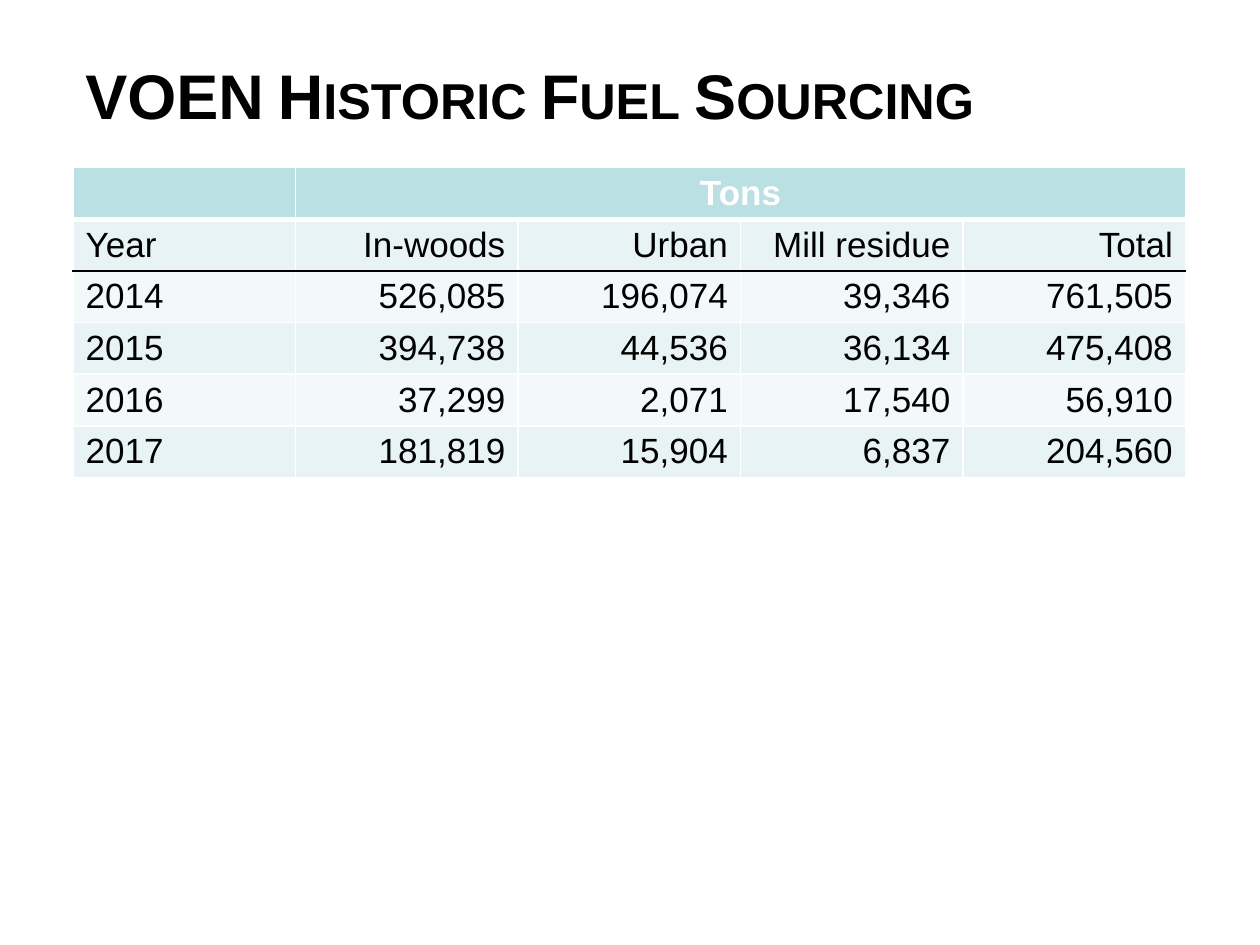
import pptx
import pptx.util
import pptx.dml.color
import pptx.enum.text
import pptx.oxml
import pptx.oxml.ns

Inches, Pt = pptx.util.Inches, pptx.util.Pt
ALIGN = pptx.enum.text.PP_ALIGN
MIDDLE = pptx.enum.text.MSO_ANCHOR.MIDDLE
FONT = "Arial"
COLORS = {"text": "000000", "white": "FFFFFF", "head": "BBE0E3",
          "dark": "E7F3F4", "light": "F3F9FA"}
ROWS = [
    ["", "Tons", "", "", ""],
    ["Year", "In-woods", "Urban", "Mill residue", "Total"],
    ["2014", "526,085", "196,074", "39,346", "761,505"],
    ["2015", "394,738", "44,536", "36,134", "475,408"],
    ["2016", "37,299", "2,071", "17,540", "56,910"],
    ["2017", "181,819", "15,904", "6,837", "204,560"],
]


def rgb(name):
    return pptx.dml.color.RGBColor.from_string(COLORS[name])


def add_run(para, text, size, color, bold):
    run = para.add_run()
    run.text = text
    font = run.font
    font.name, font.size, font.bold = FONT, Pt(size), bold
    font.color.rgb = rgb(color)
    return run


def add_line(cell, side, color, width):
    space = pptx.oxml.ns.nsdecls("a")
    cell._tc.get_or_add_tcPr().append(pptx.oxml.parse_xml(
        f'<a:ln{side} {space} w="{Pt(width)}"><a:solidFill>'
        f'<a:srgbClr val="{COLORS[color]}"/></a:solidFill></a:ln{side}>'))


def add_title(slide, left, top, width, height):
    box = slide.shapes.add_textbox(left, top, width, height)
    frame = box.text_frame
    frame.word_wrap = True
    frame.vertical_anchor = MIDDLE
    run = add_run(frame.paragraphs[0], "VOEN Historic Fuel Sourcing",
                  36, "text", True)
    run._r.get_or_add_rPr().set("cap", "small")


def fill_cell(cell, row, col, text):
    # Edges come before the fill in the cell's XML
    edges = {"L": ("white", 1), "R": ("white", 1),
             "T": {1: ("white", 3), 2: ("text", 1)}.get(row, ("white", 1)),
             "B": {0: ("white", 3), 1: ("text", 1)}.get(row, ("white", 1))}
    for side, (color, width) in edges.items():
        add_line(cell, side, color, width)
    cell.fill.solid()
    cell.fill.fore_color.rgb = rgb(
        "head" if row == 0 else "dark" if row % 2 else "light")

    # Tight margins keep the rows at their set height
    cell.margin_top = cell.margin_bottom = Inches(0.03)
    cell.vertical_anchor = MIDDLE
    para = cell.text_frame.paragraphs[0]
    para.font.size = Pt(20)
    if text:
        if row == 0:
            para.alignment = ALIGN.CENTER
        else:
            para.alignment = ALIGN.RIGHT if col else ALIGN.LEFT
        add_run(para, text, 20, "text" if row else "white", row == 0)


def add_table(slide, left, top, width, height):
    table = slide.shapes.add_table(
        len(ROWS), len(ROWS[0]), left, top, width, height).table
    table.cell(0, 1).merge(table.cell(0, 4))
    for row, texts in enumerate(ROWS):
        for col, text in enumerate(texts):
            fill_cell(table.cell(row, col), row, col, text)


def main():
    deck = pptx.Presentation()
    deck.slide_width, deck.slide_height = Inches(10), Inches(7.5)
    slide = deck.slides.add_slide(deck.slide_layouts[6])
    left, width = Inches(0.58), Inches(8.83)
    add_title(slide, left, Inches(0.33), width, Inches(0.83))
    add_table(slide, left, Inches(1.33), width, Inches(2.46))
    deck.save("out.pptx")


if __name__ == "__main__":
    main()
